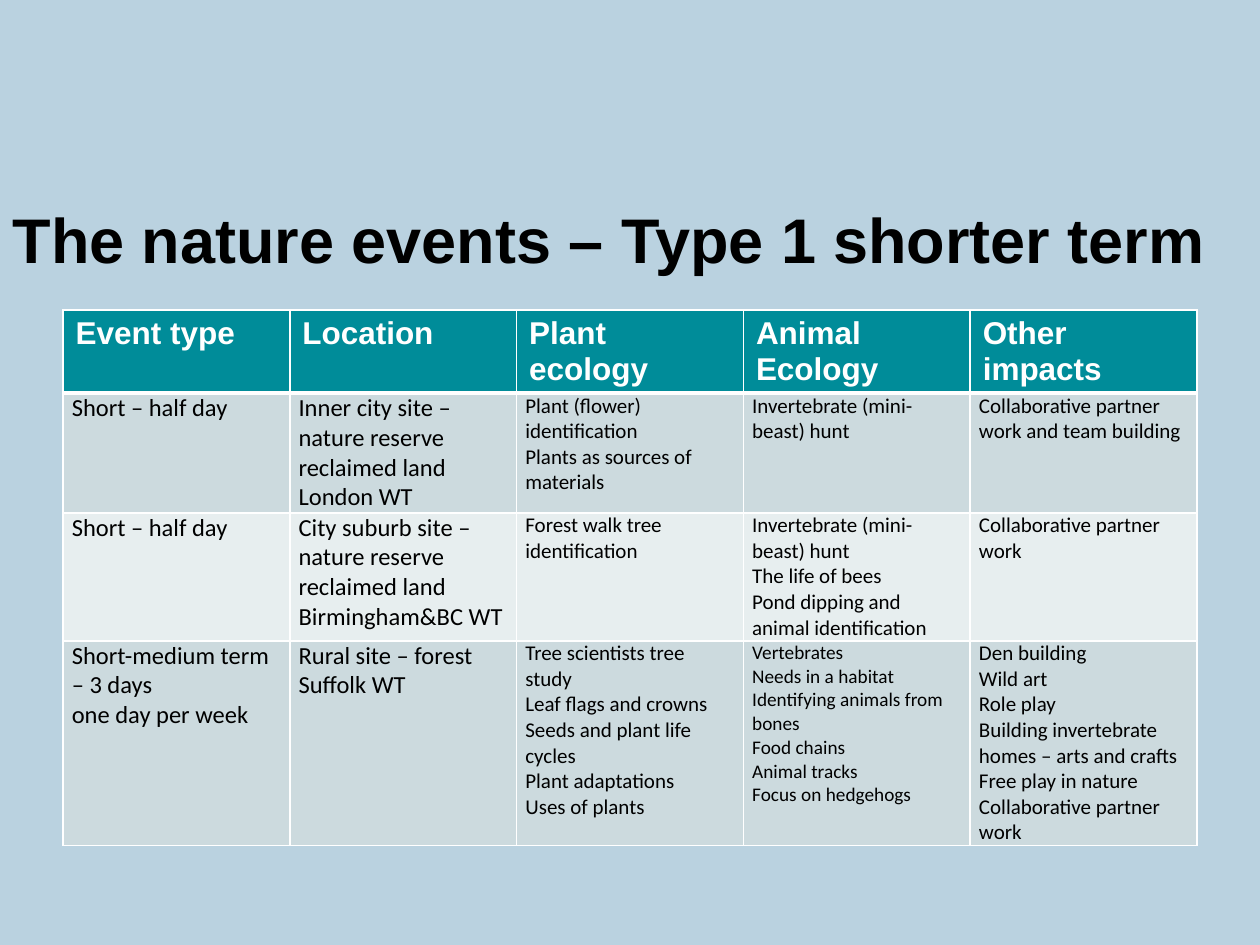
from lxml import etree
from pptx import Presentation, util as u
from pptx.dml.color import RGBColor
from pptx.enum import text
from pptx.oxml import ns

COLOURS = {
    "background": "BAD2E0",
    "header": "008C99",
    "band_dark": "CCDADE",
    "band_light": "E7EEEF",
    "light": "FFFFFF",
    "dark": "000000",
}
HEADINGS = ["Event type", "Location", "Plant ecology", "Animal Ecology", "Other impacts"]
EVENTS = [
    [
        "Short – half day",
        "Inner city site – nature reserve reclaimed land London WT",
        "Plant (flower) identification\nPlants as sources of materials",
        "Invertebrate (mini-beast) hunt",
        "Collaborative partner work and team building",
    ],
    [
        "Short – half day",
        "City suburb site – nature reserve reclaimed land\nBirmingham&BC WT",
        "Forest walk tree identification",
        "Invertebrate (mini-beast) hunt\nThe life of bees\n"
        "Pond dipping and animal identification",
        "Collaborative partner work",
    ],
    [
        "Short-medium term – 3 days\none day per week",
        "Rural site – forest\nSuffolk WT",
        "Tree scientists tree study\nLeaf flags and crowns\n"
        "Seeds and plant life cycles\nPlant adaptations\nUses of plants",
        "Vertebrates\nNeeds in a habitat\nIdentifying animals from bones\n"
        "Food chains\nAnimal tracks\nFocus on hedgehogs",
        "Den building\nWild art\nRole play\n"
        "Building invertebrate homes – arts and crafts\n"
        "Free play in nature\nCollaborative partner work",
    ],
]
BODY_SIZES = [
    [14, 14, 12, 12, 12],
    [14, 14, 12, 12, 12],
    [14, 14, 12, 11, 12],
]
ROW_HEIGHTS = [0.66, 0.95, 1.0, 1.62]


class SlideBuilder:
    def __init__(self, slide):
        self.slide = slide

    def colour(self, name):
        return RGBColor.from_string(COLOURS[name])

    def background(self, name):
        fill = self.slide.background.fill
        fill.solid()
        fill.fore_color.rgb = self.colour(name)

    def format_text(self, frame, size, font, colour, bold):
        for paragraph in frame.paragraphs:
            paragraph.alignment = text.PP_ALIGN.LEFT
            for run in paragraph.runs:
                run.font.size = u.Pt(size)
                run.font.name = font
                run.font.bold = bold
                run.font.color.rgb = self.colour(colour)

    def title(self, wording, left, top, width, height):
        shape = self.slide.shapes.title
        shape.left, shape.top = u.Inches(left), u.Inches(top)
        shape.width, shape.height = u.Inches(width), u.Inches(height)
        frame = shape.text_frame
        frame.text = wording
        frame.word_wrap = True
        frame.auto_size = text.MSO_AUTO_SIZE.NONE
        frame.vertical_anchor = text.MSO_ANCHOR.TOP
        frame.margin_top = u.Inches(0.1)
        self.format_text(frame, 36, "Arial", "dark", True)

    def borders(self, cell, top, bottom):
        properties = cell._tc.get_or_add_tcPr()
        widths = {"lnL": 1, "lnR": 1, "lnT": top, "lnB": bottom}
        for position, (side, width) in enumerate(widths.items()):
            line = etree.Element(ns.qn(f"a:{side}"), w=str(u.Pt(width)))
            fill = etree.SubElement(line, ns.qn("a:solidFill"))
            etree.SubElement(fill, ns.qn("a:srgbClr"), val=COLOURS["light"])
            properties.insert(position, line)

    def cell(self, cell, wording, fill, size, font, colour, bold):
        cell.text_frame.text = wording
        self.format_text(cell.text_frame, size, font, colour, bold)
        cell.fill.solid()
        cell.fill.fore_color.rgb = self.colour(fill)

    def table(self, left, top, width):
        table = self.slide.shapes.add_table(
            len(ROW_HEIGHTS), len(HEADINGS), u.Inches(left), u.Inches(top),
            u.Inches(width), u.Inches(sum(ROW_HEIGHTS)),
        ).table
        for row, height in zip(table.rows, ROW_HEIGHTS):
            row.height = u.Inches(height)
        for column, heading in enumerate(HEADINGS):
            header = table.cell(0, column)
            self.cell(header, heading, "header", 18, "Arial", "light", True)
            self.borders(header, 1, 3)
        for row, (event, sizes) in enumerate(zip(EVENTS, BODY_SIZES), start=1):
            band = "band_dark" if row % 2 else "band_light"
            for column, (wording, size) in enumerate(zip(event, sizes)):
                cell = table.cell(row, column)
                self.cell(cell, wording, band, size, "Calibri", "dark", False)
                cell.margin_left = cell.margin_right = u.Inches(0.07)
                cell.margin_top = cell.margin_bottom = 0
                self.borders(cell, 3 if row == 1 else 1, 1)


def main():
    presentation = Presentation()
    presentation.slide_width = u.Inches(10)
    presentation.slide_height = u.Inches(7.5)
    slide = presentation.slides.add_slide(presentation.slide_layouts[5])
    builder = SlideBuilder(slide)
    builder.background("background")
    builder.title("The nature events – Type 1 shorter term", 0, 1.49, 10, 0.98)
    builder.table(0.5, 2.46, 9)
    presentation.save("out.pptx")


if __name__ == "__main__":
    main()
